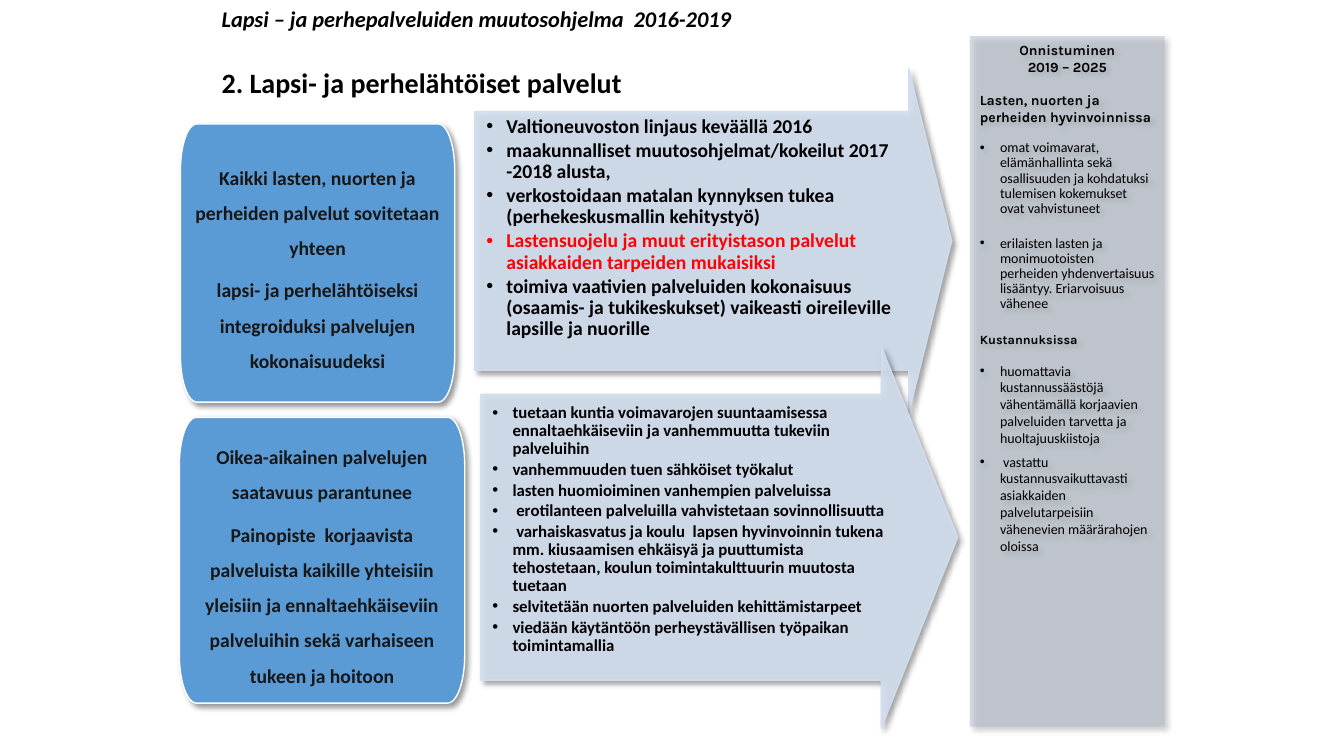
import math

from pptx import Presentation, util as u
from pptx.dml.color import RGBColor
from pptx.enum import shapes, text
from pptx.oxml import ns
from lxml import etree

BLACK = RGBColor(0x00, 0x00, 0x00)
WHITE = RGBColor(0xFF, 0xFF, 0xFF)
RED = RGBColor(0xFF, 0x00, 0x00)
INK = RGBColor(0x18, 0x17, 0x17)
BLUE = RGBColor(0x5B, 0x9B, 0xD5)
PALE = RGBColor(0xD2, 0xDE, 0xEF)
GREY = RGBColor(0xAD, 0xB9, 0xCA)

prs = Presentation()
prs.slide_width, prs.slide_height = u.Inches(13.33), u.Inches(7.5)
W, H = prs.slide_width, prs.slide_height
slide = prs.slides.add_slide(prs.slide_layouts[6])


def put(tf, words, size=10, color=BLACK, font="Calibri", bold=True, italic=False,
        align=text.PP_ALIGN.LEFT, spacing=1.0, before=0, after=0, bullet=None):
    """Add a paragraph; bullet is the left margin of bulleted text in inches."""
    p = tf.paragraphs[0] if not tf.text else tf.add_paragraph()
    p.alignment, p.line_spacing = align, spacing
    p.space_before, p.space_after = u.Pt(before), u.Pt(after)
    r = p.add_run()
    r.text = words
    r.font.name, r.font.size, r.font.color.rgb = font, u.Pt(size), color
    r.font.bold, r.font.italic = bold, italic
    if bullet:
        pPr = p._p.get_or_add_pPr()
        pPr.set("marL", str(u.Inches(bullet)))
        pPr.set("indent", str(u.Inches(-0.2)))
        etree.SubElement(pPr, ns.qn("a:buFont")).set("typeface", "Arial")
        etree.SubElement(pPr, ns.qn("a:buChar")).set("char", "•")


def finish(s, fill, line=None, alpha=100, insets=(7.2, 3.6, 7.2, 3.6),
           anchor=text.MSO_ANCHOR.TOP):
    """Style a shape with a soft shadow and return its text frame."""
    s.fill.solid()
    s.fill.fore_color.rgb = fill
    if line is None:
        s.line.fill.background()
    else:
        s.line.color.rgb, s.line.width = line, u.Pt(1)
    spPr = s._element.spPr
    if alpha < 100:
        for clr in spPr.iter(ns.qn("a:srgbClr")):
            etree.SubElement(clr, ns.qn("a:alpha")).set("val", str(alpha * 1000))
    s.shadow.inherit = False
    shadow = etree.SubElement(spPr.find(ns.qn("a:effectLst")), ns.qn("a:outerShdw"),
                              blurRad=str(u.Pt(4)), dist=str(u.Pt(3)),
                              dir="2700000", algn="tl", rotWithShape="0")
    clr = etree.SubElement(shadow, ns.qn("a:srgbClr"), val="000000")
    etree.SubElement(clr, ns.qn("a:alpha"), val="40000")
    tf = s.text_frame
    tf.word_wrap, tf.vertical_anchor = True, anchor
    (tf.margin_left, tf.margin_top,
     tf.margin_right, tf.margin_bottom) = [u.Pt(i) for i in insets]
    return tf


# Outlines as shares of their own width and height
SHAFT = 0.125
CORNER_X, CORNER_Y = 0.06, 1 / 6
rounded = []
for quarter, (cx, cy) in enumerate([(1 - CORNER_X, 1 - CORNER_Y), (CORNER_X, 1 - CORNER_Y),
                                    (CORNER_X, CORNER_Y), (1 - CORNER_X, CORNER_Y)]):
    for step in range(13):
        angle = math.radians(90 * quarter + 7.5 * step)
        rounded.append((cx + CORNER_X * math.cos(angle), cy + CORNER_Y * math.sin(angle)))

arrow_style = dict(fill=PALE, line=PALE, alpha=90)
box_style = dict(fill=BLUE, line=WHITE, insets=(7, 5, 7, 5), anchor=text.MSO_ANCHOR.MIDDLE)
box_text = dict(size=14, color=INK, align=text.PP_ALIGN.CENTER, spacing=1.5, after=5)

# Each row: arrow place, neck, insets, text size, lines; box place, lines.
# Places are left, top, width, height in percent of the slide.
rows = [
    ((35.33, 9.07, 35.48, 45.6), 0.91, (1, 34, 27, 9), 14, [
        "Valtioneuvoston linjaus keväällä 2016",
        "maakunnalliset muutosohjelmat/kokeilut 2017 -2018 alusta,",
        "verkostoidaan matalan kynnyksen tukea (perhekeskusmallin kehitystyö)",
        "Lastensuojelu ja muut erityistason palvelut asiakkaiden tarpeiden mukaisiksi",
        "toimiva vaativien palveluiden kokonaisuus (osaamis- ja tukikeskukset) "
        "vaikeasti oireileville lapsille ja nuorille",
    ], (13.43, 16.4, 20.41, 36.8), [
        "Kaikki lasten, nuorten ja perheiden palvelut sovitetaan yhteen",
        "lapsi- ja perhelähtöiseksi integroiduksi palvelujen kokonaisuudeksi",
    ]),
    ((35.78, 45.87, 35.48, 50.4), 0.84, (1, 41, 48, 16), 12, [
        "tuetaan kuntia voimavarojen suuntaamisessa ennaltaehkäiseviin ja "
        "vanhemmuutta tukeviin palveluihin",
        "vanhemmuuden tuen sähköiset työkalut",
        "lasten huomioiminen vanhempien palveluissa",
        " erotilanteen palveluilla vahvistetaan sovinnollisuutta",
        " varhaiskasvatus ja koulu  lapsen hyvinvoinnin tukena mm. kiusaamisen ehkäisyä "
        "ja puuttumista tehostetaan, koulun toimintakulttuurin muutosta tuetaan",
        "selvitetään nuorten palveluiden kehittämistarpeet",
        "viedään käytäntöön perheystävällisen työpaikan toimintamallia",
    ], (13.35, 55.2, 21.23, 37.8), [
        "Oikea-aikainen palvelujen saatavuus parantunee",
        "Painopiste  korjaavista palveluista kaikille yhteisiin yleisiin ja "
        "ennaltaehkäiseviin palveluihin sekä varhaiseen tukeen ja hoitoon",
    ]),
]

for arrow_at, neck, insets, size, aims, box_at, goals in rows:
    arrow = [(0, SHAFT), (neck, SHAFT), (neck, 0), (1, 0.5),
             (neck, 1), (neck, 1 - SHAFT), (0, 1 - SHAFT)]
    frames = []
    for (x, y, w, h), outline, style in [(arrow_at, arrow, dict(arrow_style, insets=insets)),
                                         (box_at, rounded, box_style)]:
        points = [(int((x + w * px) * W / 100), int((y + h * py) * H / 100))
                  for px, py in outline]
        builder = slide.shapes.build_freeform(*points[0])
        builder.add_line_segments(points[1:], close=True)
        frames.append(finish(builder.convert_to_shape(), **style))
    for aim in aims:
        put(frames[0], aim, size=size, spacing=0.9, after=0.15 * size, bullet=0.3,
            color=RED if aim.startswith("Lastensuojelu") else BLACK)
    for goal in goals:
        put(frames[1], goal, **box_text)

# Outcome panel
s = slide.shapes.add_shape(shapes.MSO_SHAPE.RECTANGLE, int(0.7217 * W), int(0.048 * H),
                           int(0.1448 * W), int(0.9133 * H))
tf = finish(s, GREY, alpha=47)
heading = dict(font="Karla")
centred = dict(heading, align=text.PP_ALIGN.CENTER)
point = dict(bold=False, bullet=0.2)
tight = dict(point, spacing=0.9)
for words, style in [
    ("Onnistuminen", centred),
    ("2019 – 2025", dict(centred, after=12)),
    ("Lasten, nuorten ja perheiden hyvinvoinnissa", dict(heading, after=11)),
    ("omat voimavarat, elämänhallinta sekä osallisuuden ja kohdatuksi tulemisen "
     "kokemukset ovat vahvistuneet", dict(tight, after=14)),
    ("erilaisten lasten ja monimuotoisten perheiden yhdenvertaisuus lisääntyy. "
     "Eriarvoisuus vähenee", dict(tight, after=14)),
    ("Kustannuksissa", dict(heading, size=9, after=11)),
    ("huomattavia kustannussäästöjä vähentämällä korjaavien palveluiden tarvetta "
     "ja huoltajuuskiistoja", point),
    (" vastattu kustannusvaikuttavasti asiakkaiden palvelutarpeisiin vähenevien "
     "määrärahojen oloissa", dict(point, before=5, after=5)),
]:
    put(tf, words, **style)

# Headings
for words, top, width, height, style in [
    ("2. Lapsi- ja perhelähtöiset palvelut", 0.08, 0.49, 0.06, dict(size=20)),
    ("Lapsi – ja perhepalveluiden muutosohjelma  2016-2019", 0, 0.55, 0.05,
     dict(size=16, italic=True)),
]:
    s = slide.shapes.add_textbox(int(0.1575 * W), int(top * H), int(width * W), int(height * H))
    s.text_frame.word_wrap = True
    put(s.text_frame, words, **style)

prs.save("out.pptx")
